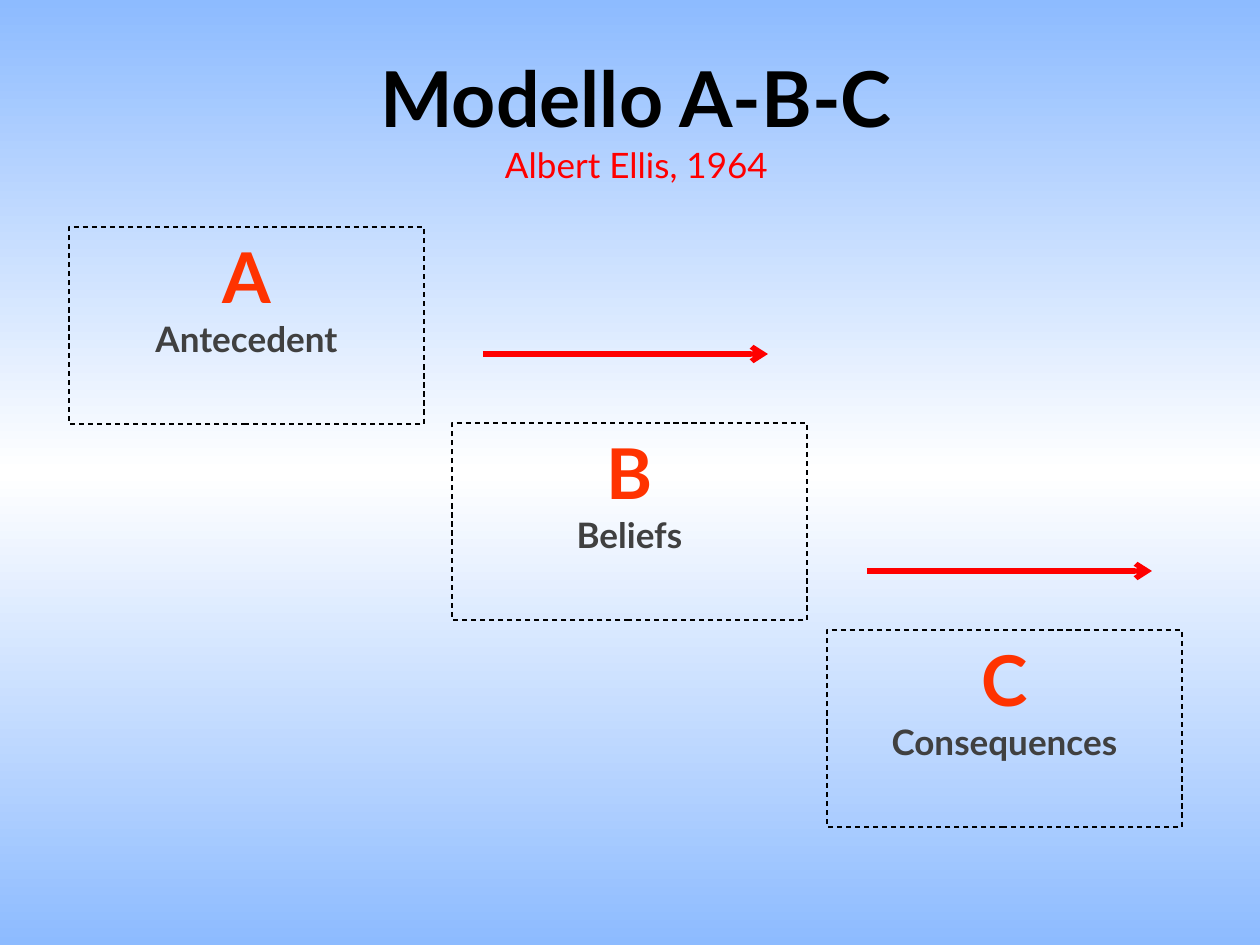
from copy import deepcopy

from lxml import etree
from pptx import Presentation
from pptx.dml.color import RGBColor
from pptx.enum import dml, shapes, text
from pptx.oxml.ns import qn
from pptx.util import Pt

PX = 914400 // 126  # EMU in one px
FONT = "Lato"
BLACK, RED, ORANGE, GREY = "000000", "FF0000", "FF3300", "404040"
SKY, WHITE = "8DBBFF", "FFFFFF"


def rgb(value):
    return RGBColor.from_string(value)


def emu(*lengths):
    return [n * PX for n in lengths]


class Deck:
    def __init__(self, width, height):
        self.prs = Presentation()
        self.prs.slide_width, self.prs.slide_height = emu(width, height)
        self.s = self.prs.slides.add_slide(self.prs.slide_layouts[6])

    def background(self, *colors):
        """Vertical gradient with evenly spaced stops."""
        fill = self.s.background.fill
        fill.gradient()
        fill.gradient_angle = 270
        stops = self.s._element.find(".//" + qn("a:gsLst"))
        while len(stops) < len(colors):
            stops.append(deepcopy(stops[0]))
        for i, (stop, color) in enumerate(zip(fill.gradient_stops, colors)):
            stop.position = i / (len(colors) - 1)
            stop.color.rgb = rgb(color)

    def run(self, p, content, size, color, bold=True):
        p.alignment = text.PP_ALIGN.CENTER
        r = p.add_run()
        r.text = content
        r.font.name, r.font.size, r.font.bold = FONT, Pt(size), bold
        r.font.color.rgb = rgb(color)

    def title(self, x, y, w, h, heading, subtitle):
        tf = self.s.shapes.add_textbox(*emu(x, y, w, h)).text_frame
        tf.word_wrap = True
        tf.vertical_anchor = text.MSO_ANCHOR.MIDDLE
        p = tf.paragraphs[0]
        self.run(p, heading, 44, BLACK)
        p.add_line_break()
        self.run(p, subtitle, 20, RED, bold=False)

    def box(self, x, y, w, h, letter, label):
        sp = self.s.shapes.add_shape(shapes.MSO_SHAPE.RECTANGLE, *emu(x, y, w, h))
        sp.shadow.inherit = False
        sp.fill.background()
        sp.line.color.rgb = rgb(BLACK)
        sp.line.width = Pt(0.75)
        sp.line.dash_style = dml.MSO_LINE.DASH
        tf = sp.text_frame
        tf.word_wrap = True
        tf.vertical_anchor = text.MSO_ANCHOR.TOP
        self.run(tf.paragraphs[0], letter, 40, ORANGE)
        self.run(tf.add_paragraph(), label, 20, GREY)

    def arrow(self, x, y, length):
        line = self.s.shapes.add_connector(
            shapes.MSO_CONNECTOR.STRAIGHT, *emu(x, y, x + length, y))
        line.line.color.rgb = rgb(RED)
        line.line.width = Pt(3)
        etree.SubElement(line.line._get_or_add_ln(), qn("a:tailEnd"), type="arrow")
        etree.SubElement(line._element.spPr, qn("a:effectLst"))


def main():
    deck = Deck(1260, 945)
    deck.background(SKY, WHITE, SKY)

    # Three steps, descending to the right
    for x, y, letter, label in [
        (69, 227, "A", "Antecedent"),
        (452, 423, "B", "Beliefs"),
        (827, 630, "C", "Consequences"),
    ]:
        deck.box(x, y, 355, 197, letter, label)

    # Arrows leading to the next step
    for x, y in [(483, 354), (867, 571)]:
        deck.arrow(x, y, 285)

    # Heading
    deck.title(101, 39, 1071, 158, "Modello A-B-C", "Albert Ellis, 1964")

    deck.prs.save("out.pptx")


if __name__ == "__main__":
    main()
